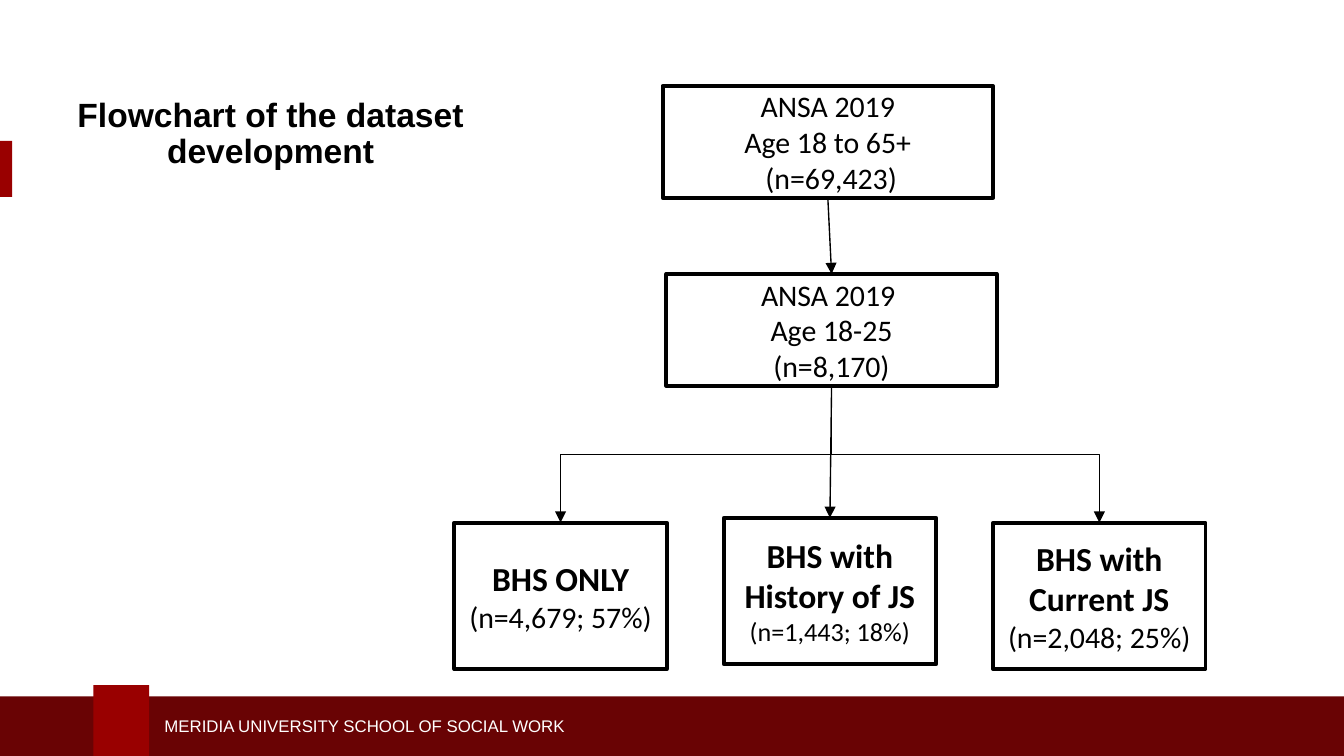
from dataclasses import dataclass

from lxml.etree import SubElement
from pptx import Presentation
from pptx.dml.color import RGBColor
from pptx.enum.shapes import MSO_CONNECTOR, MSO_SHAPE
from pptx.enum.text import MSO_ANCHOR, PP_ALIGN
from pptx.oxml.ns import qn
from pptx.util import Pt

BLACK = RGBColor(0x00, 0x00, 0x00)
WHITE = RGBColor(0xFF, 0xFF, 0xFF)
CRIMSON = RGBColor(0x99, 0x00, 0x00)
MAROON = RGBColor(0x69, 0x03, 0x04)


@dataclass(frozen=True)
class Run:
    text: str
    size: float = 16
    bold: bool = False


@dataclass(frozen=True)
class Box:
    """A flowchart box; each entry of paragraphs is a tuple of runs."""
    x: float
    y: float
    w: float
    h: float
    paragraphs: tuple[tuple[Run, ...], ...]

    @property
    def top(self) -> tuple[float, float]:
        return self.x + self.w / 2, self.y

    @property
    def bottom(self) -> tuple[float, float]:
        return self.x + self.w / 2, self.y + self.h


def add_run(p, text: str, *, size: float, font: str = "Calibri",
            bold: bool = False, color: RGBColor = BLACK) -> None:
    r = p.add_run()
    r.text = text
    r.font.size = Pt(size)
    r.font.name = font
    r.font.bold = bold
    r.font.color.rgb = color


def add_rect(s, x: float, y: float, w: float, h: float, fill: RGBColor | None = None):
    """Draw a filled bar, or a black outline when no fill is given."""
    sp = s.shapes.add_shape(MSO_SHAPE.RECTANGLE, Pt(x), Pt(y), Pt(w), Pt(h))
    sp.shadow.inherit = False
    if fill is None:
        sp.fill.background()
        sp.line.color.rgb = BLACK
        sp.line.width = Pt(2)
    else:
        sp.fill.solid()
        sp.fill.fore_color.rgb = fill
        sp.line.fill.background()
    return sp


def add_box(s, box: Box) -> None:
    tf = add_rect(s, box.x, box.y, box.w, box.h).text_frame
    tf.word_wrap = True
    tf.vertical_anchor = MSO_ANCHOR.MIDDLE
    for i, runs in enumerate(box.paragraphs):
        p = tf.add_paragraph() if i else tf.paragraphs[0]
        p.alignment = PP_ALIGN.CENTER
        for run in runs:
            add_run(p, run.text, size=run.size, bold=run.bold)


def add_arrow(s, start: Box, end: Box, elbow: bool = False) -> None:
    """Link the bottom of one box to the top of another."""
    (x1, y1), (x2, y2) = start.bottom, end.top
    kind = MSO_CONNECTOR.ELBOW if elbow else MSO_CONNECTOR.STRAIGHT
    c = s.shapes.add_connector(kind, Pt(x1), Pt(y1), Pt(x2), Pt(y2))
    if elbow:
        # A preset elbow leaves sideways, so turn it to leave downwards.
        w, h = y2 - y1, abs(x2 - x1)
        c.left, c.top = Pt((x1 + x2 - w) / 2), Pt((y1 + y2 - h) / 2)
        c.width, c.height = Pt(w), Pt(h)
        xfrm = c._element.spPr.find(qn("a:xfrm"))
        xfrm.set("rot", "16200000" if x2 > x1 else "5400000")
        xfrm.set("flipH", "1" if x2 > x1 else "0")
    c.line.color.rgb = BLACK
    c.line.width = Pt(0.75)
    SubElement(c.line._get_or_add_ln(), qn("a:tailEnd"), type="triangle")
    SubElement(c._element.spPr, qn("a:effectLst"))


def add_footer(s) -> None:
    add_rect(s, 0, 373, 720, 32, MAROON)
    add_rect(s, 50, 367, 30, 38, CRIMSON)
    tf = s.shapes.add_textbox(Pt(81), Pt(380), Pt(284), Pt(18)).text_frame
    tf.word_wrap = True
    tf.vertical_anchor = MSO_ANCHOR.MIDDLE
    add_run(tf.paragraphs[0], "MERIDIA UNIVERSITY SCHOOL OF SOCIAL WORK",
            size=9, font="Arial", color=WHITE)


def format_title(title) -> None:
    title.left, title.top, title.width, title.height = Pt(24), Pt(49), Pt(242), Pt(47)
    tf = title.text_frame
    tf.word_wrap = True
    tf.vertical_anchor = MSO_ANCHOR.TOP
    p = tf.paragraphs[0]
    p.alignment = PP_ALIGN.CENTER
    p.line_spacing = 0.9
    p.space_after = Pt(6)
    add_run(p, "Flowchart of the dataset development", size=18, font="Arial", bold=True)


ALL_AGES = Box(355, 46, 177, 60, (
    (Run("ANSA 2019"),), (Run("Age 18 to 65+"),), (Run(" (n=69,423)"),)))
YOUNG_ADULTS = Box(357, 146.75, 177, 60, (
    (Run("ANSA 2019 "),), (Run("Age 18-25"),), (Run("(n=8,170)"),)))

GROUP_X, GROUP_PITCH, GROUP_W, GROUP_H = 243.4, 144.3, 113.8, 78.5
GROUPS = [
    Box(GROUP_X + i * GROUP_PITCH, y, GROUP_W, GROUP_H, paragraphs)
    for i, (y, paragraphs) in enumerate([
        (280, ((Run("BHS ONLY ", 18, True), Run("(n=4,679; 57%)")),)),
        (277.4, ((Run("BHS with History of JS", 18, True),), (Run("(n=1,443; 18%)", 14),))),
        (280, ((Run("BHS with Current JS", 18, True),), (Run("(n=2,048; 25%)"),))),
    ])
]


def main() -> None:
    prs = Presentation()
    prs.slide_width, prs.slide_height = Pt(720), Pt(405)
    s = prs.slides.add_slide(prs.slide_layouts[5])
    format_title(s.shapes.title)
    add_rect(s, 0, 75.5, 6.5, 30, CRIMSON)
    add_footer(s)
    for box in (ALL_AGES, YOUNG_ADULTS, *GROUPS):
        add_box(s, box)
    add_arrow(s, ALL_AGES, YOUNG_ADULTS)
    for i, group in enumerate(GROUPS):
        add_arrow(s, YOUNG_ADULTS, group, elbow=i != 1)
    prs.save("out.pptx")


if __name__ == "__main__":
    main()
